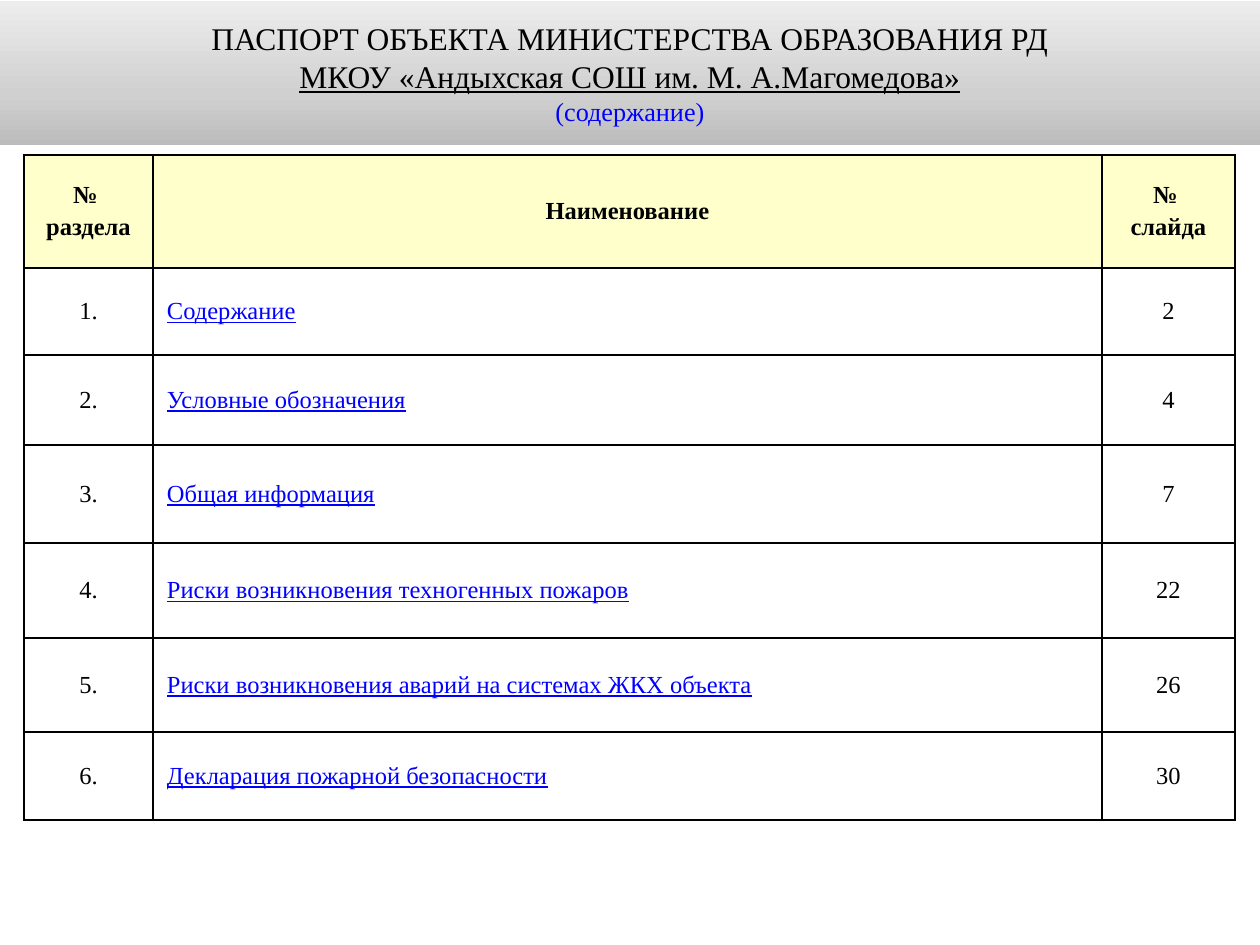
from copy import deepcopy

from lxml import etree
from pptx import Presentation
from pptx.dml.color import RGBColor
from pptx.enum.shapes import MSO_SHAPE
from pptx.enum.text import MSO_ANCHOR, PP_ALIGN
from pptx.oxml.ns import qn
from pptx.util import Pt

RECTANGLE = MSO_SHAPE.RECTANGLE
MIDDLE = MSO_ANCHOR.MIDDLE
LEFT, CENTER = PP_ALIGN.LEFT, PP_ALIGN.CENTER

BLACK = RGBColor(0x00, 0x00, 0x00)
BLUE = RGBColor(0x00, 0x00, 0xFF)
WHITE = RGBColor(0xFF, 0xFF, 0xFF)
CREAM = RGBColor(0xFF, 0xFF, 0xCC)
BANNER_STOPS = [
    (0, RGBColor(0xBC, 0xBC, 0xBC)),
    (0.35, RGBColor(0xD0, 0xD0, 0xD0)),
    (1, RGBColor(0xED, 0xED, 0xED)),
]
FONT = "Times New Roman"

# Content
TITLE = [
    ("ПАСПОРТ ОБЪЕКТА МИНИСТЕРСТВА ОБРАЗОВАНИЯ РД", dict(size=Pt(18))),
    ("МКОУ «Андыхская СОШ им. М. А.Магомедова»", dict(size=Pt(18), underline=True)),
    ("(содержание)", dict(size=Pt(15)), BLUE),
]
HEADINGS = [["№ ", "раздела"], ["Наименование"], ["№ ", "слайда"]]
SECTIONS = [
    ("Содержание", 2),
    ("Условные обозначения", 4),
    ("Общая информация", 7),
    ("Риски возникновения техногенных пожаров", 22),
    ("Риски возникновения аварий на системах ЖКХ объекта", 26),
    ("Декларация пожарной безопасности", 30),
]

# Layout in px
PX = 914400 // 126
PAGE_SIZE = (1260, 945)
BANNER_BOX = (0, 1, 1260, 144)
TABLE_ORIGIN = (24, 155)
COLUMN_WIDTHS = [129, 949, 133]
ROW_HEIGHTS = [113, 87, 90, 98, 95, 94, 88]
CELL_MARGINS = dict(margin_left=14 * PX, margin_right=14 * PX,
                    margin_top=6 * PX, margin_bottom=6 * PX)

HEADING = dict(size=Pt(14), bold=True)
PLAIN = dict(size=Pt(14), bold=False)
ENTRY = dict(size=Pt(14), bold=False, underline=True)


def set_values(target, values):
    for name, value in values.items():
        setattr(target, name, value)


def write_lines(frame, lines, align=CENTER, gap=0):
    for index, (text, style, *color) in enumerate(lines):
        para = frame.paragraphs[0] if index == 0 else frame.add_paragraph()
        para.alignment = align
        if index and gap:
            para.space_before = Pt(gap)
        span = para.add_run()
        span.text = text
        span.font.name = FONT
        span.font.color.rgb = color[0] if color else BLACK
        set_values(span.font, style)


def add_borders(cell):
    properties = cell._tc.get_or_add_tcPr()
    for index, side in enumerate(("a:lnL", "a:lnR", "a:lnT", "a:lnB")):
        line = etree.Element(qn(side), w=str(Pt(1)))
        fill = etree.SubElement(line, qn("a:solidFill"))
        etree.SubElement(fill, qn("a:srgbClr"), val=str(BLACK))
        properties.insert(index, line)


def fill_cell(cell, lines, color, align=CENTER):
    set_values(cell, CELL_MARGINS)
    cell.vertical_anchor = MIDDLE
    cell.fill.solid()
    cell.fill.fore_color.rgb = color
    add_borders(cell)
    write_lines(cell.text_frame, lines, align, gap=3)


def add_contents_table(page):
    size = (sum(COLUMN_WIDTHS), sum(ROW_HEIGHTS))
    box = [length * PX for length in (*TABLE_ORIGIN, *size)]
    table = page.shapes.add_table(len(ROW_HEIGHTS), len(COLUMN_WIDTHS), *box).table
    for column, width in zip(table.columns, COLUMN_WIDTHS):
        column.width = width * PX
    for row, height in zip(table.rows, ROW_HEIGHTS):
        row.height = height * PX

    for column, lines in enumerate(HEADINGS):
        fill_cell(table.cell(0, column), [(text, HEADING) for text in lines], CREAM)
    for number, (name, slide_number) in enumerate(SECTIONS, 1):
        fill_cell(table.cell(number, 0), [(f"{number}.", PLAIN)], WHITE)
        fill_cell(table.cell(number, 1), [(name, ENTRY, BLUE)], WHITE, LEFT)
        fill_cell(table.cell(number, 2), [(str(slide_number), PLAIN)], WHITE)


def add_banner(page):
    banner = page.shapes.add_shape(RECTANGLE, *[length * PX for length in BANNER_BOX])
    banner.shadow.inherit = False
    banner.line.fill.background()

    # Vertical gradient, darkest at the bottom
    banner.fill.gradient()
    banner.fill.gradient_angle = 90
    first_stop = next(banner.element.spPr.iter(qn("a:gs")))
    first_stop.addnext(deepcopy(first_stop))
    for stop, (position, color) in zip(banner.fill.gradient_stops, BANNER_STOPS):
        stop.position = position
        stop.color.rgb = color

    banner.text_frame.word_wrap = True
    banner.text_frame.vertical_anchor = MIDDLE
    write_lines(banner.text_frame, TITLE)


def main():
    deck = Presentation()
    deck.slide_width, deck.slide_height = [length * PX for length in PAGE_SIZE]
    page = deck.slides.add_slide(deck.slide_layouts[6])
    add_contents_table(page)
    add_banner(page)
    deck.save("out.pptx")


if __name__ == "__main__":
    main()
